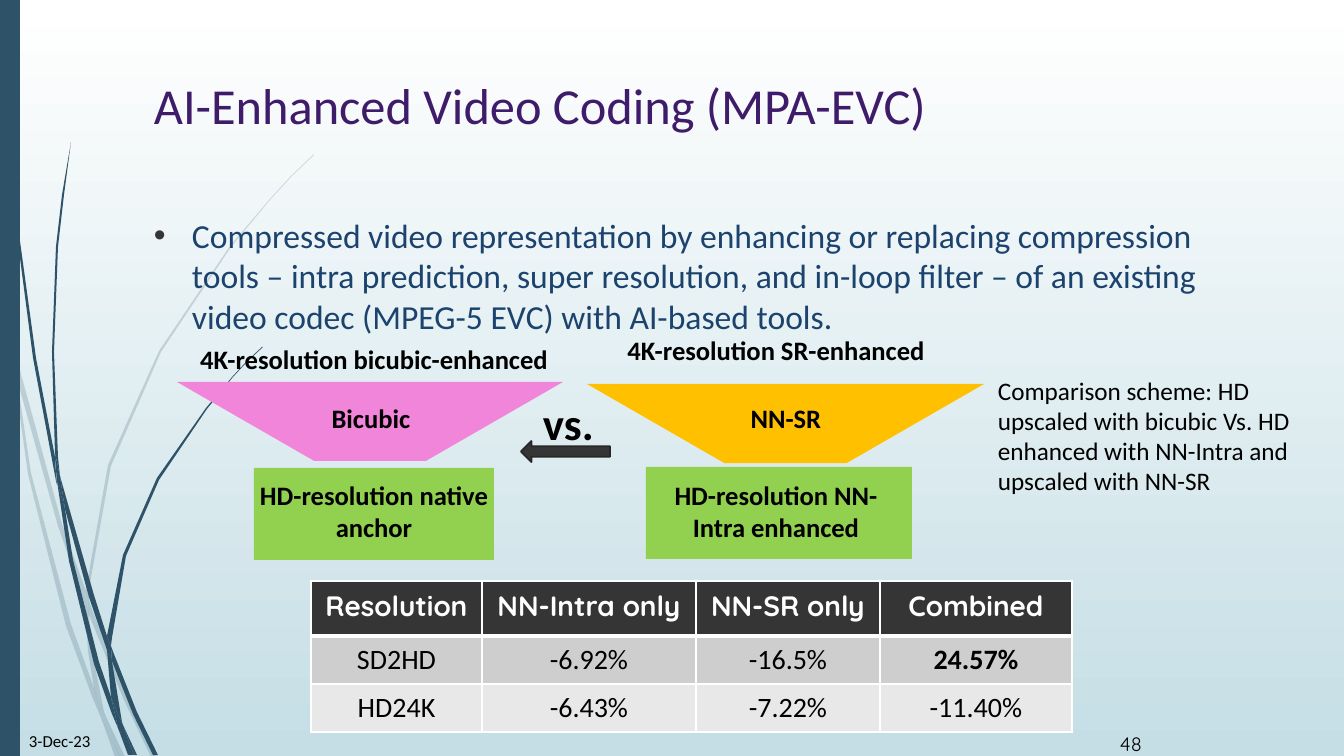
from lxml.etree import SubElement
from pptx import Presentation
from pptx.dml.color import RGBColor
from pptx.enum.shapes import MSO_SHAPE
from pptx.enum.text import PP_ALIGN
from pptx.oxml.ns import qn
from pptx.util import Emu, Pt

PX = 914400 / 100.8

PALE_WISPS = [
    [(11, 353), (9, 325), (0, 284), (0, 301), (10, 347)],
    [(58, 526), (85, 604), (86, 591), (62, 524), (14, 348), (17, 379)],
    [(93, 612), (89, 601), (89, 615), (124, 700), (151, 757), (156, 757), (128, 698)],
    [(120, 757), (125, 757), (106, 717)],
    [(94, 688), (71, 624), (31, 473), (17, 379), (11, 353), (28, 474), (66, 626), (93, 699),
     (102, 720), (100, 713)],
    [(85, 604), (88, 651), (94, 688), (97, 698), (106, 717), (104, 712), (92, 651),
     (89, 615), (89, 613)],
    [(89, 589), (111, 466), (161, 352), (231, 247), (270, 200), (292, 176), (314, 155),
     (314, 154), (291, 176), (270, 199), (230, 246), (159, 351), (108, 465), (86, 589),
     (86, 591), (89, 601)],
    [(102, 720), (115, 757), (120, 757)],
    [(89, 613), (89, 615), (89, 601), (86, 591), (85, 604)],
    [(97, 698), (94, 688), (100, 713), (102, 720), (120, 757), (106, 717)],
]
DARK_WISPS = [
    [(7, 111), (17, 235), (33, 358), (56, 481), (57, 485), (55, 461), (55, 457), (36, 358),
     (19, 234), (8, 110), (5, 48), (4, 0), (3, 0), (4, 48)],
    [(89, 597), (107, 650), (107, 636), (94, 595), (60, 476), (65, 509)],
    [(114, 654), (111, 646), (112, 661), (133, 714), (153, 755), (158, 755), (137, 712)],
    [(111, 697), (99, 662), (73, 560), (65, 509), (57, 481), (69, 561), (94, 664), (112, 714),
     (118, 728), (117, 723)],
    [(60, 476), (58, 457), (54, 352), (58, 247), (64, 195), (71, 142), (62, 195), (56, 247),
     (52, 352), (55, 453)],
    [(134, 755), (137, 755), (123, 725)],
    [(57, 481), (65, 509), (60, 476), (55, 453), (55, 457)],
    [(112, 638), (126, 556), (159, 480), (207, 409), (233, 377), (247, 362), (263, 347),
     (262, 347), (247, 361), (233, 376), (206, 408), (157, 478), (123, 555), (107, 636),
     (111, 646)],
    [(118, 728), (128, 755), (132, 755)],
    [(107, 650), (111, 697), (117, 712), (123, 725), (122, 722), (112, 661), (110, 656)],
    [(107, 650), (110, 656), (112, 661), (111, 646), (107, 636)],
    [(117, 712), (111, 697), (117, 723), (118, 728), (131, 755), (134, 755), (123, 725)],
]
RESULTS = [
    ["Resolution", "NN-Intra only", "NN-SR only", "Combined"],
    ["SD2HD", "-6.92%", "-16.5%", "24.57%"],
    ["HD24K", "-6.43%", "-7.22%", "-11.40%"],
]


def px(length):
    return Emu(round(length * PX))


def color(value):
    return RGBColor.from_string(value)


def style_runs(paragraph, size, ink, bold=False, face="Calibri"):
    for run in paragraph.runs:
        run.font.size = Pt(size)
        run.font.bold = bold
        run.font.name = face
        run.font.color.rgb = color(ink)


def add_text(slide, box, words, size, ink="000000", bold=False, face="Calibri", align=PP_ALIGN.LEFT):
    frame = slide.shapes.add_textbox(*map(px, box)).text_frame
    frame.word_wrap = True
    frame.text = words
    paragraph = frame.paragraphs[0]
    paragraph.alignment = align
    style_runs(paragraph, size, ink, bold, face)
    return paragraph


def paint(shape, fill):
    shape.shadow.inherit = False
    shape.fill.solid()
    shape.fill.fore_color.rgb = color(fill)
    shape.line.fill.background()


def add_block(slide, kind, box, fill):
    block = slide.shapes.add_shape(kind, *map(px, box))
    paint(block, fill)
    return block


def add_wisp(slide, outline, opacity):
    builder = slide.shapes.build_freeform(*outline[0], scale=PX)
    builder.add_line_segments(outline[1:], close=True)
    wisp = builder.convert_to_shape()
    paint(wisp, "2E5369")
    if opacity < 100:
        tint = wisp._element.spPr.find(".//" + qn("a:srgbClr"))
        SubElement(tint, qn("a:alpha"), val=str(opacity * 1000))


def add_backdrop(slide, height):
    fill = slide.background.fill
    fill.gradient()
    fill.gradient_angle = 270
    for stop, tone in zip(fill.gradient_stops, ("FFFFFF", "C5DEE5")):
        stop.color.rgb = color(tone)
    for wisps, opacity in ((PALE_WISPS, 20), (DARK_WISPS, 100)):
        for outline in wisps:
            add_wisp(slide, outline, opacity)
    add_block(slide, MSO_SHAPE.RECTANGLE, (0, 0, 20, height), "2E5369")


def add_summary(slide, box):
    x, y, width, height = box
    add_text(slide, (x, y, width, 141), "AI-Enhanced Video Coding (MPA-EVC)", 36, "3F1C6A")
    summary = add_text(
        slide, (x, y + 141, width, height - 141),
        "Compressed video representation by enhancing or replacing compression tools – intra "
        "prediction, super resolution, and in-loop filter – of an existing video codec "
        "(MPEG-5 EVC) with AI-based tools.", 24, "1C436D")
    props = summary._p.get_or_add_pPr()
    props.set("marL", str(px(38)))
    props.set("indent", str(-px(38)))
    bullet_color = SubElement(props, qn("a:buClr"))
    SubElement(bullet_color, qn("a:srgbClr"), val="353535")
    SubElement(props, qn("a:buFont"), typeface="Arial")
    SubElement(props, qn("a:buChar"), char="•")


def add_pipeline(slide, funnel, base, label_center, caption_top, funnel_fill, captions):
    caption, method, source = captions
    add_block(slide, MSO_SHAPE.RECTANGLE, base, "92D050")
    upscaler = add_block(slide, MSO_SHAPE.TRAPEZOID, funnel, funnel_fill)
    upscaler.rotation = 180
    upscaler.adjustments[0] = 1.737
    method_center = funnel[0] + funnel[2] // 2 + 1
    for words, center, top, width, height in (
        (caption, label_center, caption_top, 474, 50),
        (method, method_center, 397, 274, 42),
        (source, label_center, 474, 274, 79),
    ):
        add_text(slide, (center - width // 2, top, width, height), words, 19,
                 bold=True, align=PP_ALIGN.CENTER)


def add_comparison(slide, box):
    x, y, width, height = box
    add_pipeline(slide, (x + 410, y + 46, 397, 79), (x + 469, y + 129, 266, 92), x + 599, y - 9,
                 "FFC000", ("4K-resolution SR-enhanced", "NN-SR", "HD-resolution NN-Intra enhanced"))
    add_pipeline(slide, (x, y + 44, 386, 79), (x + 77, y + 130, 240, 92), x + 197, y,
                 "F185D9", ("4K-resolution bicubic-enhanced", "Bicubic", "HD-resolution native anchor"))
    add_text(slide, (x + 356, y + 53, 123, 92), "vs.", 32, bold=True)
    arrow = add_block(slide, MSO_SHAPE.LEFT_ARROW, (x + 344, y + 103, 89, 21), "353535")
    arrow.line.color.rgb = color("272727")
    arrow.line.width = Pt(1.25)
    add_text(slide, (x + 811, y + 32, width - 811, 132),
             "Comparison scheme: HD upscaled with bicubic Vs. HD enhanced with NN-Intra "
             "and upscaled with NN-SR", 18)


def add_borders(cell, bottom):
    props = cell._tc.get_or_add_tcPr()
    for position, (side, points) in enumerate((("L", 1), ("R", 1), ("T", 1), ("B", bottom))):
        edge = SubElement(props, qn("a:ln" + side), w=str(Pt(points)))
        SubElement(SubElement(edge, qn("a:solidFill")), qn("a:srgbClr"), val="FFFFFF")
        props.remove(edge)
        props.insert(position, edge)


def add_results(slide, box):
    table = slide.shapes.add_table(len(RESULTS), len(RESULTS[0]), *map(px, box)).table
    for column, width in zip(table.columns, (171, 214, 184, 192)):
        column.width = px(width)
    for row, height in zip(table.rows, (55, 48, 48)):
        row.height = px(height)
    for r, (values, fill) in enumerate(zip(RESULTS, ("353535", "CECECE", "E8E8E8"))):
        header = r == 0
        for c, value in enumerate(values):
            cell = table.cell(r, c)
            cell.margin_left = cell.margin_right = px(13)
            cell.margin_top = cell.margin_bottom = px(7)
            cell.text = value
            paragraph = cell.text_frame.paragraphs[0]
            paragraph.alignment = PP_ALIGN.CENTER
            style_runs(paragraph, 20, "FFFFFF" if header else "000000",
                       header or value == "24.57%", "Quicksand" if header else "Calibri")
            cell.fill.solid()
            cell.fill.fore_color.rgb = color(fill)
            add_borders(cell, 3 if header else 1)


def add_footer(slide, box):
    x, y, width, height = box
    add_text(slide, (x, y, 110, height), "3-Dec-23", 12)
    add_text(slide, (x + width - 61, y + 1, 61, height), "48", 14, face="Quicksand")


def main():
    deck = Presentation()
    deck.slide_width, deck.slide_height = px(1344), px(756)
    slide = deck.slides.add_slide(deck.slide_layouts[6])
    add_backdrop(slide, 756)
    add_summary(slide, (144, 69, 1125, 267))
    add_footer(slide, (19, 726, 1152, 28))
    add_results(slide, (311, 581, 761, 151))
    add_comparison(slide, (177, 338, 1124, 222))
    deck.save("out.pptx")


if __name__ == "__main__":
    main()
